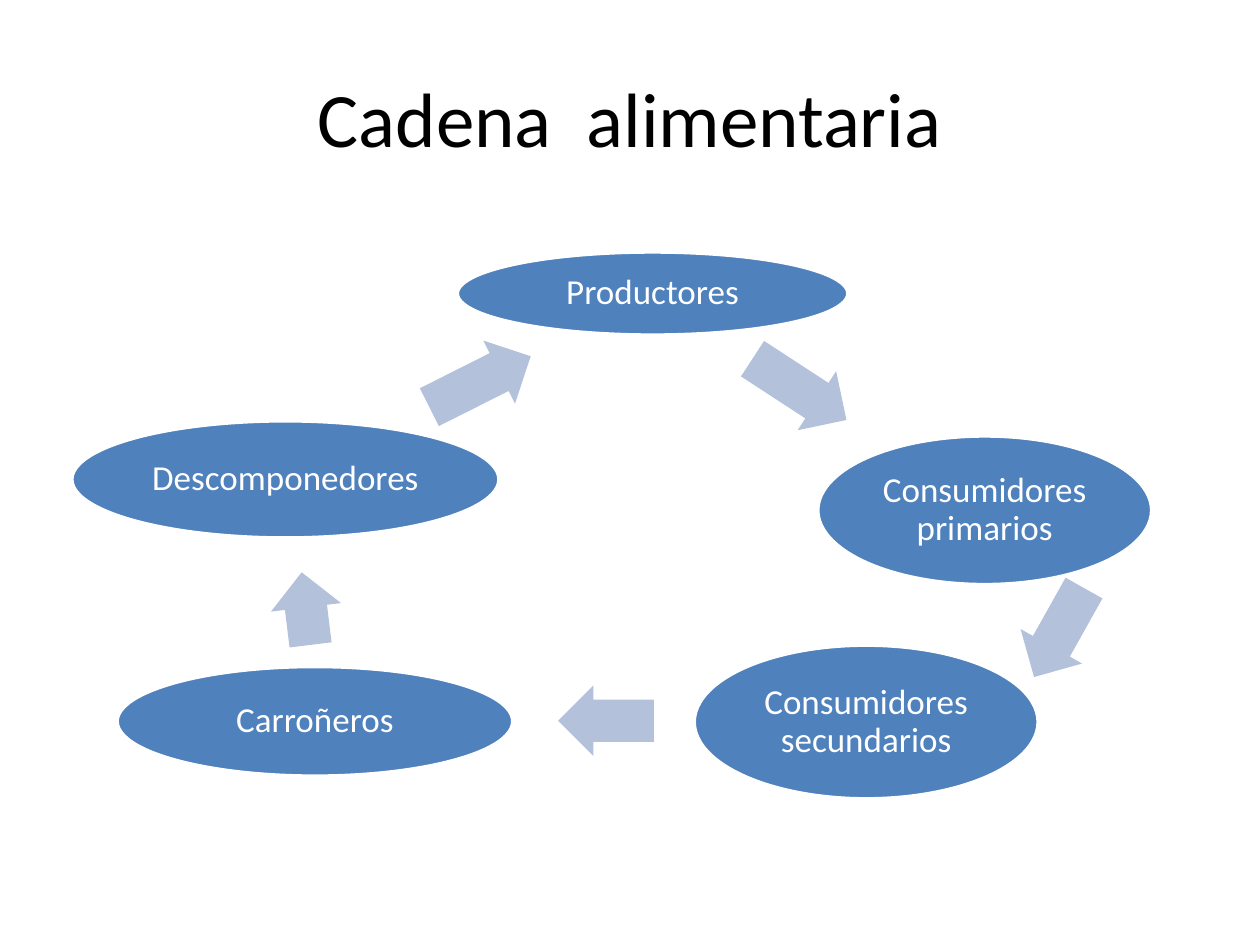
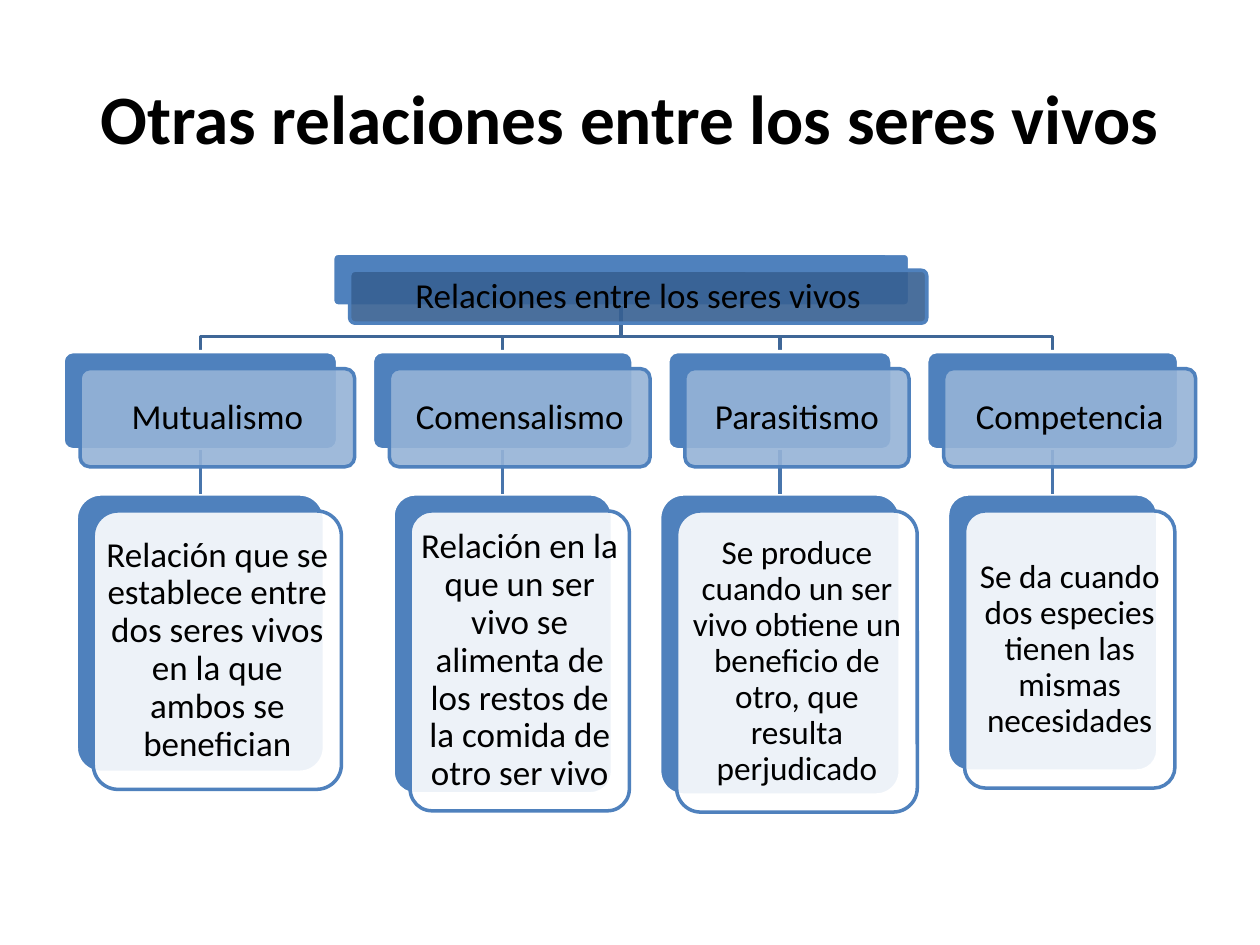
from lxml import etree
from pptx import Presentation
from pptx.dml.color import RGBColor
from pptx.enum.shapes import MSO_CONNECTOR, MSO_SHAPE
from pptx.enum.text import MSO_ANCHOR, PP_ALIGN
from pptx.oxml.ns import qn
from pptx.util import Inches, Pt

FONT = "Calibri"
BLACK = RGBColor(0x00, 0x00, 0x00)
WHITE = RGBColor(0xFF, 0xFF, 0xFF)
BLUE = RGBColor(0x4F, 0x81, 0xBD)
ARROW_BLUE = RGBColor(0xB3, 0xC1, 0xDB)
ROOT_BLUE = RGBColor(0x37, 0x60, 0x92)
HEADER_BLUE = RGBColor(0x95, 0xB3, 0xD7)
BRANCH_BLUE = RGBColor(0x3F, 0x67, 0x97)
STEM_BLUE = RGBColor(0x48, 0x75, 0xAC)

LINE_WIDTH = Pt(2)
CARD_SHIFT = 0.135
COLUMN_GAP = 0.275
HEADER_TOP, HEADER_HEIGHT = 0.78, 0.78
DETAIL_TOP = 1.91

LINKS = [
    ("Productores", (3.13, 0, 3.1, 0.66), (5.4, 0.81, 0.89), 33.1),
    ("Consumidores primarios", (5.99, 1.46, 2.65, 1.18), (7.5, 2.74, 0.81), 119.3),
    ("Consumidores secundarios", (5.01, 3.12, 2.73, 1.22), (3.93, 3.44, 0.76), 180),
    ("Carroñeros", (0.43, 3.29, 3.14, 0.87), (1.64, 2.55, 0.58), 263),
    ("Descomponedores", (0.07, 1.34, 3.39, 0.93), (2.86, 0.75, 0.9), 333.3),
]
ARROW_HEIGHT = 0.56

RELATIONS = [
    ("Mutualismo", 2.18, 1.97, 2.21, 20,
     "Relación que se establece entre dos seres vivos en la que ambos se benefician"),
    ("Comensalismo", 2.07, 1.74, 2.38, 20,
     "Relación en la que un ser vivo se alimenta de los restos de la comida de otro ser vivo"),
    ("Parasitismo", 1.78, 1.91, 2.39, 19,
     "Se produce cuando un ser vivo obtiene un beneficio de otro, que resulta perjudicado"),
    ("Competencia", 2.0, 1.67, 2.2, 19,
     "Se da cuando dos especies tienen las mismas necesidades"),
]


def write(frame, text, size, color, bold=False):
    frame.word_wrap = True
    frame.vertical_anchor = MSO_ANCHOR.MIDDLE
    paragraph = frame.paragraphs[0]
    paragraph.text = text
    paragraph.alignment = PP_ALIGN.CENTER
    paragraph.font.name = FONT
    paragraph.font.size = Pt(size)
    paragraph.font.bold = bold
    paragraph.font.color.rgb = color
    return paragraph


def write_label(shape, text, size, color, inset):
    frame = shape.text_frame
    frame.margin_left = frame.margin_right = Inches(inset)
    frame.margin_top = frame.margin_bottom = Inches(inset)
    write(frame, text, size, color).line_spacing = 0.9


def add_titled_slide(deck, text, size, bold=False):
    slide = deck.slides.add_slide(deck.slide_layouts[5])
    title = slide.shapes.title
    title.left, title.top = Inches(0.5), Inches(0.3)
    title.width, title.height = Inches(9), Inches(1.25)
    write(title.text_frame, text, size, BLACK, bold)
    return slide


def add_block(slide, kind, box, fill, outline=None):
    block = slide.shapes.add_shape(kind, *map(Inches, box))
    block.shadow.inherit = False
    block.fill.solid()
    block.fill.fore_color.rgb = fill
    if outline is None:
        block.line.fill.background()
    else:
        block.line.color.rgb = outline
        block.line.width = LINE_WIDTH
    return block


def add_food_cycle(slide, left, top):
    for name, (x, y, width, height), (arrow_x, arrow_y, arrow_width), angle in LINKS:
        organism = add_block(slide, MSO_SHAPE.OVAL,
                             (left + x, top + y, width, height), BLUE, WHITE)
        write_label(organism, name, 20, WHITE, 0.03)
        arrow = add_block(slide, MSO_SHAPE.RIGHT_ARROW,
                          (left + arrow_x, top + arrow_y, arrow_width, ARROW_HEIGHT),
                          ARROW_BLUE)
        arrow.adjustments[0], arrow.adjustments[1] = 0.6, 0.5
        arrow.rotation = angle


def add_card(slide, box, fill, outline):
    card = add_block(slide, MSO_SHAPE.ROUNDED_RECTANGLE, box, fill, outline)
    card.adjustments[0] = 0.1
    return card


def add_front_card(slide, box, fill, text, size):
    x, y, width, height = box
    front = add_card(slide, (x + CARD_SHIFT, y + CARD_SHIFT, width, height), fill, BLUE)
    color = front.fill._xPr.find(qn("a:solidFill"))[0]
    etree.SubElement(color, qn("a:alpha")).set("val", "90000")
    write_label(front, text, size, BLACK, 0.02)


def add_branch(slide, start_x, start_y, end_x, end_y):
    bend_y = start_y + (end_y - start_y) * 2 / 3
    outline = slide.shapes.build_freeform(Inches(start_x), Inches(start_y))
    corners = [(start_x, bend_y), (end_x, bend_y), (end_x, end_y)]
    outline.add_line_segments([(Inches(x), Inches(y)) for x, y in corners], close=False)
    branch = outline.convert_to_shape()
    branch.shadow.inherit = False
    branch.fill.background()
    branch.line.color.rgb = BRANCH_BLUE
    branch.line.width = LINE_WIDTH


def add_stem(slide, header, detail):
    stem = slide.shapes.add_connector(MSO_CONNECTOR.STRAIGHT, 0, 0, 0, 0)
    stem.begin_connect(header, 2)
    stem.end_connect(detail, 0)
    stem.line.color.rgb = STEM_BLUE
    stem.line.width = LINE_WIDTH
    etree.SubElement(stem._element.spPr, qn("a:effectLst"))


def add_relation_tree(slide, left, top):
    root_box = (left + 2.14, top, 4.58, 0.42)
    root_x, root_bottom = root_box[0] + root_box[2] / 2, top + root_box[3]
    fronts = [(root_box, ROOT_BLUE, "Relaciones entre los seres vivos", 20)]
    add_card(slide, root_box, BLUE, WHITE)
    column_left = left
    for name, header_width, detail_width, detail_height, size, meaning in RELATIONS:
        center = column_left + header_width / 2
        header_box = (column_left, top + HEADER_TOP, header_width, HEADER_HEIGHT)
        detail_box = (center - detail_width / 2, top + DETAIL_TOP,
                      detail_width, detail_height)
        add_branch(slide, root_x, root_bottom, center, top + HEADER_TOP)
        header = add_card(slide, header_box, BLUE, WHITE)
        detail = add_card(slide, detail_box, BLUE, WHITE)
        add_stem(slide, header, detail)
        fronts.append((header_box, HEADER_BLUE, name, 20))
        fronts.append((detail_box, WHITE, meaning, size))
        column_left += header_width + COLUMN_GAP
    for front in fronts:
        add_front_card(slide, *front)


def main():
    deck = Presentation()
    deck.slide_width, deck.slide_height = Inches(10), Inches(7.5)
    add_food_cycle(add_titled_slide(deck, "Cadena  alimentaria", 44), 0.5, 2)
    relations = add_titled_slide(deck, "Otras relaciones entre los seres vivos", 39.6, True)
    add_relation_tree(relations, 0.5, 2.01)
    deck.save("out.pptx")


if __name__ == "__main__":
    main()
